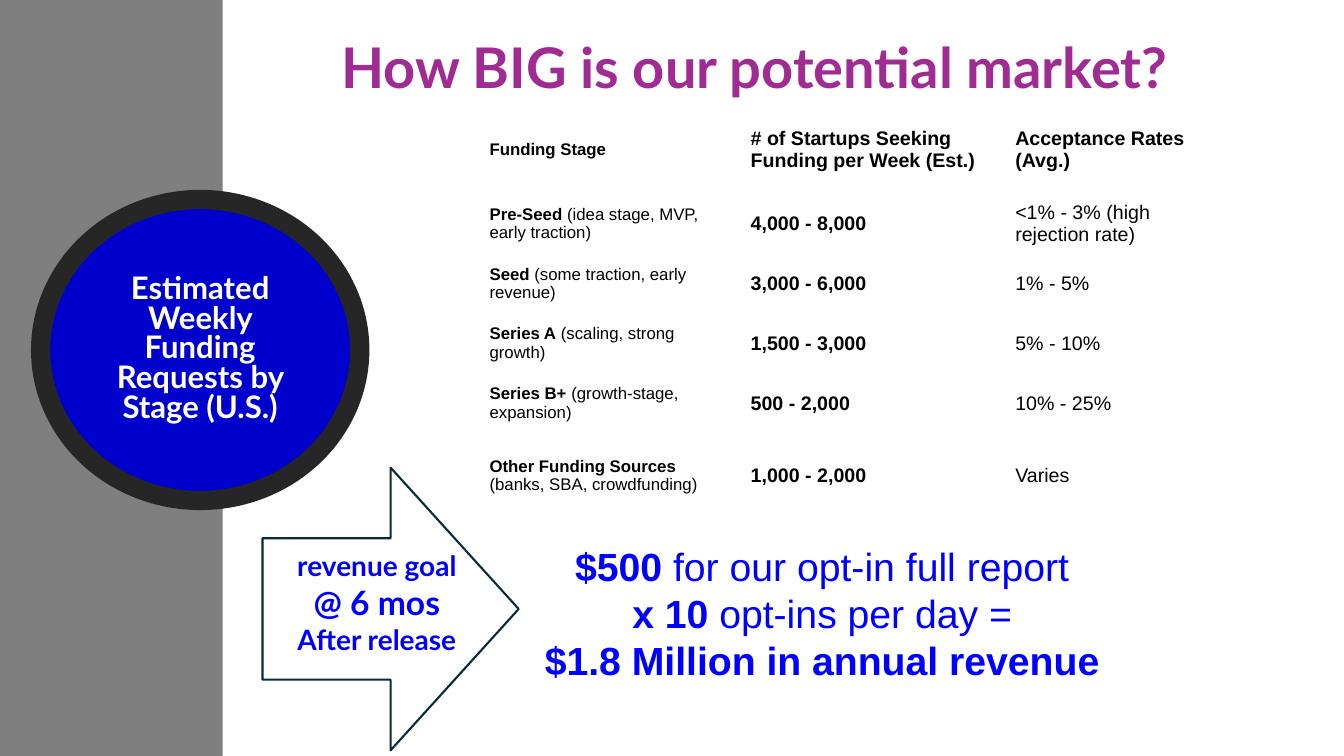
import pptx
import pptx.util
import pptx.dml.color
import pptx.enum.shapes
import pptx.enum.text

Pt = pptx.util.Pt
SHAPE = pptx.enum.shapes.MSO_SHAPE
ALIGN = pptx.enum.text.PP_ALIGN
MIDDLE = pptx.enum.text.MSO_ANCHOR.MIDDLE

COLORS = {
    "band": "7F7F7F", "circle": "0000CC", "ring": "262626", "white": "FFFFFF",
    "black": "000000", "title": "A02B93", "goal": "0000FF", "arrow": "092A39",
}

TITLE = "How BIG is our potential market?"
CIRCLE = "Estimated Weekly Funding Requests by Stage (U.S.)"
GOAL = [("revenue goal", 20), ("@ 6 mos", 24), ("After release", 20)]
REVENUE = [
    [("$500 ", True), ("for our opt-in full report", False)],
    [("x 10", True), (" opt-ins per day =", False)],
    [("$1.8 Million in annual revenue", True)],
]
HEADINGS = ["Funding Stage", "# of Startups Seeking Funding per Week (Est.)",
            "Acceptance Rates (Avg.)"]
STAGES = [
    ("Pre-Seed", " (idea stage, MVP, early traction)", "4,000 - 8,000",
     "<1% - 3% (high rejection rate)"),
    ("Seed", " (some traction, early revenue)", "3,000 - 6,000", "1% - 5%"),
    ("Series A", " (scaling, strong growth)", "1,500 - 3,000", "5% - 10%"),
    ("Series B+", " (growth-stage, expansion)", "500 - 2,000", "10% - 25%"),
    ("Other Funding Sources", " (banks, SBA, crowdfunding)", "1,000 - 2,000", "Varies"),
]
COLUMN_WIDTHS = [186.5, 189, 156]
COLUMN_SIZES = [12, 14, 14]
ROW_HEIGHTS = [63.4] + [42.8] * 4 + [60.5]

deck = pptx.Presentation()
deck.slide_width, deck.slide_height = Pt(960), Pt(540)
slide = deck.slides.add_slide(deck.slide_layouts[6])


def rgb(name):
    return pptx.dml.color.RGBColor.from_string(COLORS[name])


def write(paragraph, text, size, color, font="Arial", bold=True, align=ALIGN.CENTER):
    paragraph.alignment = align
    run = paragraph.add_run()
    run.text = text
    run.font.size, run.font.name, run.font.bold = Pt(size), font, bold
    run.font.color.rgb = rgb(color)


def add_figure(kind, box, fill=None, line=None, weight=0):
    figure = slide.shapes.add_shape(kind, *map(Pt, box))
    figure.shadow.inherit = False
    if fill:
        figure.fill.solid()
        figure.fill.fore_color.rgb = rgb(fill)
    else:
        figure.fill.background()
    if line:
        figure.line.color.rgb = rgb(line)
        figure.line.width = Pt(weight)
    else:
        figure.line.fill.background()
    return figure


def add_lines(box, count, wrap=False):
    frame = slide.shapes.add_textbox(*map(Pt, box)).text_frame
    frame.word_wrap = wrap
    for _ in range(count - 1):
        frame.add_paragraph()
    return frame.paragraphs


add_figure(SHAPE.RECTANGLE, (0, 0, 159, 540), "band")

circle = add_figure(SHAPE.OVAL, (29, 142.5, 228, 215), "circle", "ring", 13.75).text_frame
circle.word_wrap = True
circle.vertical_anchor = MIDDLE
circle.paragraphs[0].line_spacing = 0.8
write(circle.paragraphs[0], CIRCLE, 22.2, "white", "Lato")

stages = slide.shapes.add_table(
    len(ROW_HEIGHTS), len(COLUMN_WIDTHS), Pt(342.5), Pt(75),
    Pt(sum(COLUMN_WIDTHS)), Pt(sum(ROW_HEIGHTS))).table
stages.first_row = stages.horz_banding = False
for column, width in zip(stages.columns, COLUMN_WIDTHS):
    column.width = Pt(width)
for row, height in zip(stages.rows, ROW_HEIGHTS):
    row.height = Pt(height)

rows = [[[(heading, True)] for heading in HEADINGS]]
rows += [[[(stage, True), (detail, False)], [(requests, True)], [(rate, False)]]
         for stage, detail, requests, rate in STAGES]
for r, row in enumerate(rows):
    for c, parts in enumerate(row):
        cell = stages.cell(r, c)
        cell.fill.background()
        cell.vertical_anchor = MIDDLE
        for text, bold in parts:
            write(cell.text_frame.paragraphs[0], text, COLUMN_SIZES[c], "black",
                  bold=bold, align=ALIGN.LEFT)

write(add_lines((231, 19.5, 616, 55.5), 1)[0], TITLE, 40, "title", "Lato")

for paragraph, (text, size) in zip(add_lines((203, 388, 132.5, 85), len(GOAL)), GOAL):
    write(paragraph, text, size, "goal", "Lato")

revenue = add_lines((361.5, 384, 451.5, 109), len(REVENUE), wrap=True)
for paragraph, parts in zip(revenue, REVENUE):
    for text, bold in parts:
        write(paragraph, text, 28, "goal", bold=bold)

add_figure(SHAPE.RIGHT_ARROW, (187.5, 334, 183, 202), line="arrow", weight=1.5)

deck.save("out.pptx")
